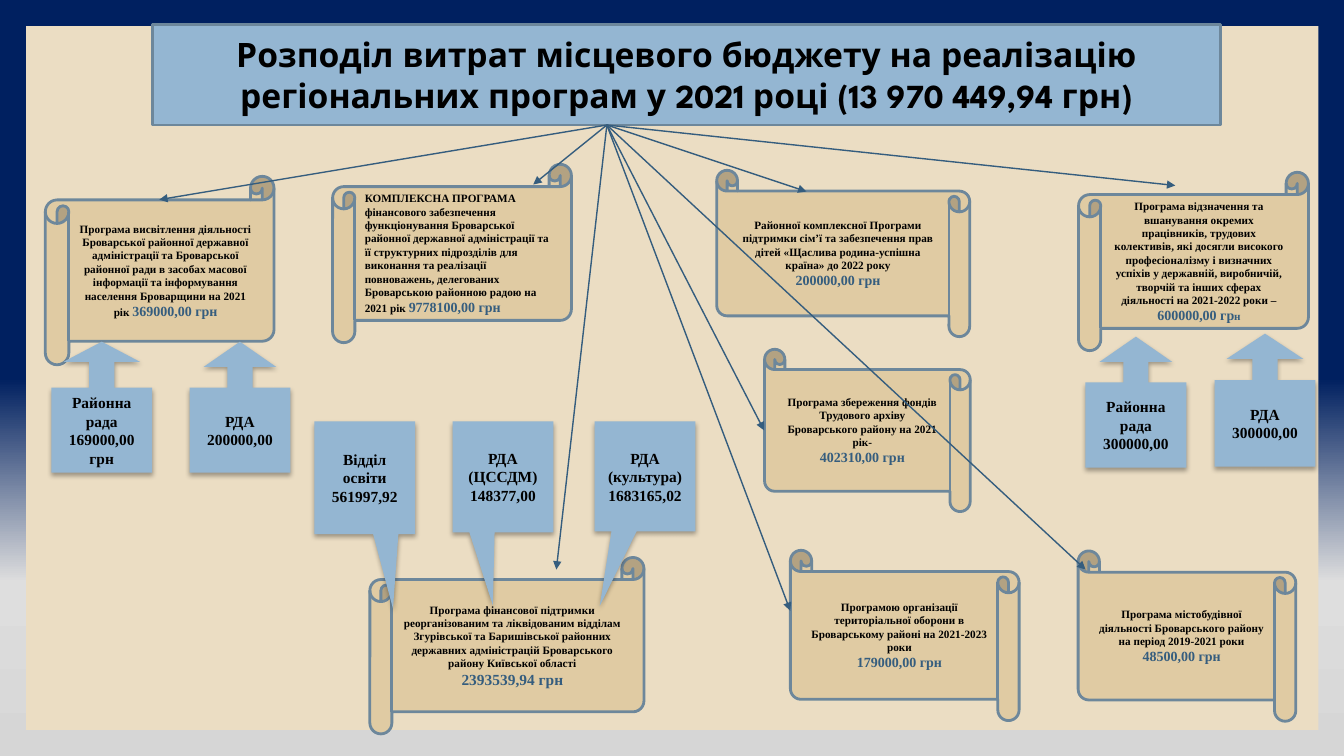
"""Build the slide on how the local budget is split among regional programmes."""
from lxml.etree import SubElement
from pptx import Presentation
from pptx.dml.color import RGBColor
from pptx.enum.shapes import MSO_CONNECTOR, MSO_SHAPE as SHAPE
from pptx.enum.text import MSO_ANCHOR, MSO_AUTO_SIZE, PP_ALIGN as ALIGN
from pptx.oxml.ns import qn
from pptx.util import Pt

BLACK = RGBColor(0x00, 0x00, 0x00)
BLUE = RGBColor(0x94, 0xB6, 0xD2)
EDGE = RGBColor(0x6D, 0x87, 0x9B)
ACCENT = RGBColor(0x35, 0x5D, 0x7E)
CREAM = RGBColor(0xEB, 0xDD, 0xC3)
SAND = RGBColor(0xE0, 0xCB, 0xA3)
NAVY = RGBColor(0x00, 0x20, 0x60)
LIGHT = RGBColor(0xDE, 0xDE, 0xDE)
GREY = RGBColor(0xD6, 0xD6, 0xD6)

HEAD_FONT = "League Spartan"
BODY_FONT = "Times New Roman"


class Deck:
    """Holds the style and the current slide."""

    def __init__(self, prs):
        self.slide = prs.slides.add_slide(prs.slide_layouts[5])
        self.shapes = self.slide.shapes

    def background(self, stops):
        fill = self.slide.background.fill
        fill.gradient()
        fill.gradient_angle = 270
        gs_list = self.slide.element.find(".//" + qn("a:gsLst"))
        gs_list.clear()
        for percent, color in stops:
            gs = SubElement(gs_list, qn("a:gs"), pos=str(percent * 1000))
            SubElement(gs, qn("a:srgbClr"), val=str(color))

    def text(self, tf, paragraphs, font, align=ALIGN.CENTER):
        tf.word_wrap = True
        tf.vertical_anchor = MSO_ANCHOR.MIDDLE
        for i, runs in enumerate(paragraphs):
            p = tf.add_paragraph() if i else tf.paragraphs[0]
            p.alignment = align
            for content, size, color in runs:
                r = p.add_run()
                r.text = content
                r.font.name = font
                r.font.size = Pt(size)
                r.font.bold = True
                r.font.color.rgb = color

    def paint(self, sp, fill, line=None):
        sp.fill.solid()
        sp.fill.fore_color.rgb = fill
        if line is None:
            sp.line.fill.background()
        else:
            sp.line.color.rgb = line
            sp.line.width = Pt(2)

    def shape(self, kind, box, fill, line=None):
        sp = self.shapes.add_shape(kind, *map(Pt, box))
        sp.shadow.inherit = False
        self.paint(sp, fill, line)
        return sp

    def panel(self, box):
        sp = self.shape(SHAPE.RECTANGLE, box, CREAM)
        self.shapes.title.element.addprevious(sp.element)

    def title(self, box, content):
        sp = self.shapes.title
        sp.left, sp.top, sp.width, sp.height = map(Pt, box)
        geom = SubElement(sp.element.spPr, qn("a:prstGeom"), prst="roundRect")
        SubElement(geom, qn("a:avLst"))
        self.paint(sp, BLUE, EDGE)
        self.text(sp.text_frame, [[(content, 24, BLACK)]], HEAD_FONT)
        sp.text_frame.auto_size = MSO_AUTO_SIZE.NONE

    def scroll(self, box, paragraphs, align=ALIGN.CENTER, turned=False):
        kind = SHAPE.VERTICAL_SCROLL if turned else SHAPE.HORIZONTAL_SCROLL
        sp = self.shape(kind, box, SAND, EDGE)
        self.text(sp.text_frame, paragraphs, BODY_FONT, align)
        if turned:
            sp.rotation = 90
            sp.element.find(".//" + qn("a:bodyPr")).set("vert", "vert270")

    def callout(self, kind, box, adjustments, lines):
        sp = self.shape(kind, box, BLUE)
        for i, value in enumerate(adjustments):
            sp.adjustments[i] = value
        effects = sp.element.spPr.find(qn("a:effectLst"))
        shadow = SubElement(effects, qn("a:outerShdw"), blurRad=str(Pt(3.5)),
                            dist=str(Pt(2.2)), dir="5400000", rotWithShape="0")
        color = SubElement(shadow, qn("a:srgbClr"), val=str(BLACK))
        SubElement(color, qn("a:alpha"), val="32000")
        self.text(sp.text_frame, [[(t, 11, BLACK)] for t in lines], BODY_FONT)

    def arrow(self, start, end):
        cx = self.shapes.add_connector(MSO_CONNECTOR.STRAIGHT, *map(Pt, start + end))
        cx.line.color.rgb = ACCENT
        cx.line.width = Pt(1)
        spPr = cx.element.spPr
        SubElement(spPr.find(qn("a:ln")), qn("a:tailEnd"), type="triangle")
        SubElement(spPr, qn("a:effectLst"))


def name(content):
    return content, 8, BLACK


def amount(content, size=10):
    return content, size, ACCENT


WIDE_SCROLLS = [
    ((32.4, 126, 163.4, 134.6), ALIGN.CENTER, [[
        name("Програма висвітлення діяльності Броварської районної державної "
             "адміністрації та Броварської районної ради в засобах масової інформації "
             "та інформування населення Броварщини на 2021 рік "),
        amount("369000,00 грн")]]),
    ((770.4, 123.1, 164.2, 127.4), ALIGN.CENTER, [[
        name("Програма відзначення та вшанування окремих працівників, трудових "
             "колективів, які досягли високого професіоналізму і визначних успіхів у "
             "державній, виробничій, творчій та інших сферах діяльності на "
             "2021-2022 роки – "),
        amount("600000,00 гр"), amount("н", 8)]]),
    ((237.6, 117.4, 170.6, 127.4), ALIGN.LEFT, [
        [name("КОМПЛЕКСНА ПРОГРАМА")],
        [name("фінансового забезпечення функціонування Броварської районної державної "
              "адміністрації та її структурних підрозділів для виконання та реалізації "
              "повноважень, делегованих Броварською районною радою на 2021 рік "),
         amount("9778100,00 грн")]]),
    ((264.2, 398.2, 195.8, 126), ALIGN.CENTER, [
        [name("Програма фінансової підтримки реорганізованим та ліквідованим відділам "
              "Згурівської та Баришівської районних державних адміністрацій "
              "Броварського району Київської області")],
        [amount("2393539,94 грн", 11)]]),
]
TURNED_SCROLLS = [
    ((561.6, 234, 115.9, 146.9),
     "Програма збереження фондів Трудового архіву Броварського району на 2021 рік-",
     "402310,00 грн"),
    ((542.9, 90.7, 118.8, 180.7),
     "Районної комплексної Програми підтримки сім’ї та забезпечення прав дітей "
     "«Щаслива родина-успішна країна» до 2022 року", "200000,00 грн"),
    ((787, 376.6, 121.7, 155.5),
     "Програма містобудівної діяльності Броварського району на період "
     "2019-2021 роки", "48500,00 грн"),
    ((585.4, 372.2, 121.7, 163.4),
     "Програмою організації територіальної оборони в Броварському районі на "
     "2021-2023 роки", "179000,00 грн"),
]
UP, WEDGE = SHAPE.UP_ARROW_CALLOUT, SHAPE.RECTANGULAR_CALLOUT
CALLOUTS = [
    (UP, (36.7, 244.1, 72, 93.6), (0.25, 0.38, 0.2, 0.65),
     ["Районна рада 169000,00 грн"]),
    (UP, (135.4, 244.1, 72, 93.6), (0.25, 0.36, 0.25, 0.65), ["РДА 200000,00"]),
    (UP, (775.4, 240.5, 72, 93.6), (0.25, 0.36, 0.25, 0.65),
     ["Районна рада 300000,00"]),
    (UP, (867.6, 238.3, 72, 95), (0.25, 0.38, 0.25, 0.65), ["РДА 300000,00"]),
    (WEDGE, (424.8, 301, 72, 78.5), (-0.45, 1.18), ["РДА (культура)", "1683165,02"]),
    (WEDGE, (323.3, 301, 72, 79.2), (-0.1, 1.16), ["РДА (ЦССДМ)", "148377,00"]),
    (WEDGE, (224.6, 301, 72, 80.6), (0.28, 1.16), ["Відділ освіти 561997,92"]),
]
ARROW_START = (433.5, 89.3)
ARROW_ENDS = [(113.8, 142.6), (380.9, 131.8), (576, 136.8), (839.5, 132.5),
              (545.8, 307.4), (564.5, 436.3), (397.4, 406.8), (775.4, 406.8)]


def main():
    prs = Presentation()
    prs.slide_width, prs.slide_height = Pt(960), Pt(540)
    deck = Deck(prs)
    deck.background([(50, NAVY), (77, LIGHT), (100, GREY)])
    deck.panel((18.7, 18.7, 923, 502.6))
    deck.title((108.7, 17.3, 763.2, 72),
               "Розподіл витрат місцевого бюджету на реалізацію регіональних програм "
               "у 2021 році (13 970 449,94 грн)")
    for box, align, paragraphs in WIDE_SCROLLS:
        deck.scroll(box, paragraphs, align)
    for box, programme, total in TURNED_SCROLLS:
        deck.scroll(box, [[name(programme)], [amount(total)]], turned=True)
    for callout in CALLOUTS:
        deck.callout(*callout)
    for end in ARROW_ENDS:
        deck.arrow(ARROW_START, end)
    prs.save("out.pptx")


if __name__ == "__main__":
    main()
